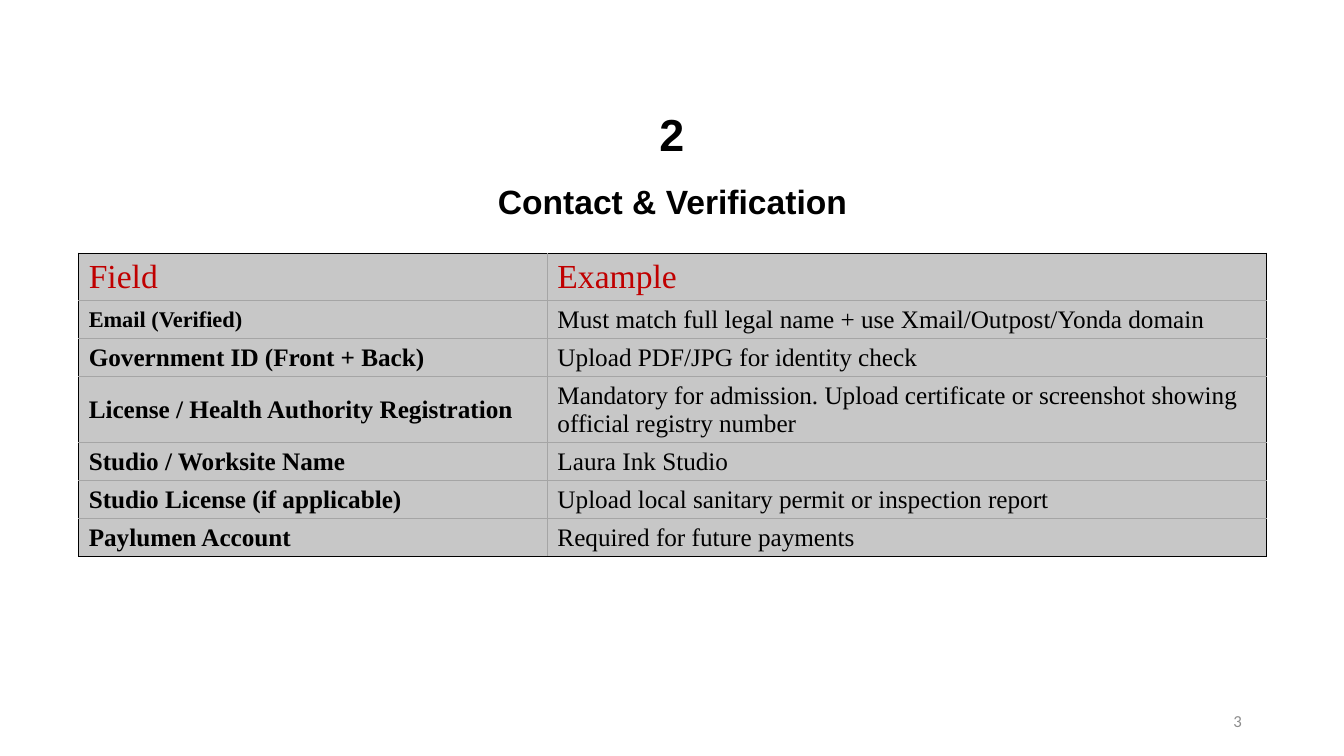
"""Build the contact and verification slide with its table of required fields."""
import dataclasses

import lxml.etree
import pptx
import pptx.dml.color
import pptx.enum.text
import pptx.oxml.ns
import pptx.util

COLORS = {"text": "000000", "header": "C00000", "cell": "C7C7C7",
          "outline": "000000", "grid": "A5A5A5", "number": "8C8C8C"}
SERIF = "Times New Roman"
ALIGN = pptx.enum.text.PP_ALIGN
MIDDLE = pptx.enum.text.MSO_ANCHOR.MIDDLE
COLUMN_WIDTHS = (334.8, 513.4)


@dataclasses.dataclass
class FieldRow:
    """One row of the table, with its height and text format."""
    field: str
    example: str
    height: float = 27.1
    field_size: float = 18
    example_size: float = 18
    color: str = "text"
    bold_field: bool = True


@dataclasses.dataclass
class Label:
    """A text box with its place and text format."""
    text: str
    left: float
    top: float
    width: float
    height: float
    size: float
    font: str
    color: str
    align: ALIGN
    bold: bool = False
    wrap: bool = True
    anchor: pptx.enum.text.MSO_ANCHOR = MIDDLE


ROWS = [
    FieldRow("Field", "Example", 33.8, 24, 24, "header", False),
    FieldRow("Email (Verified)",
             "Must match full legal name + use Xmail/Outpost/Yonda domain", field_size=16),
    FieldRow("Government ID (Front + Back)", "Upload PDF/JPG for identity check"),
    FieldRow("License / Health Authority Registration",
             "Mandatory for admission. Upload certificate or screenshot showing "
             "official registry number", 47.1),
    FieldRow("Studio / Worksite Name", "Laura Ink Studio"),
    FieldRow("Studio License (if applicable)",
             "Upload local sanitary permit or inspection report"),
    FieldRow("Paylumen Account", "Required for future payments"),
]
LABELS = [
    Label("2", 463.7, 72.7, 32.4, 46.1, 32, "Arial", "text", ALIGN.CENTER, True, False,
          pptx.enum.text.MSO_ANCHOR.TOP),
    Label("3", 678.2, 500.4, 216, 28.8, 12, "Calibri", "number", ALIGN.RIGHT),
]


def write_text(text_frame, text: str, *, size: float, font: str, color: str,
               bold: bool = False, align: ALIGN = ALIGN.LEFT) -> None:
    """Put one formatted paragraph in a text frame."""
    paragraph = text_frame.paragraphs[0]
    paragraph.alignment = align
    run = paragraph.add_run()
    run.text = text
    run.font.size = pptx.util.Pt(size)
    run.font.name = font
    run.font.bold = bold
    run.font.color.rgb = pptx.dml.color.RGBColor.from_string(COLORS[color])


def set_border(cell, side: str, outer: bool) -> None:
    """Draw one side of a cell as table outline or inner grid line."""
    qualify = pptx.oxml.ns.qn
    properties = cell._tc.get_or_add_tcPr()
    width = pptx.util.Pt(0.96 if outer else 0.5)
    line = lxml.etree.SubElement(properties, qualify(f"a:ln{side}"), w=str(int(width)))
    fill = lxml.etree.SubElement(line, qualify("a:solidFill"))
    lxml.etree.SubElement(fill, qualify("a:srgbClr"),
                          val=COLORS["outline" if outer else "grid"])


def add_field_table(slide, rows: list[FieldRow]) -> None:
    """Add the table of fields and examples."""
    table = slide.shapes.add_table(
        len(rows), len(COLUMN_WIDTHS), pptx.util.Pt(56.2), pptx.util.Pt(180.9),
        pptx.util.Pt(sum(COLUMN_WIDTHS)),
        pptx.util.Pt(sum(row.height for row in rows))).table
    table.first_row = table.horz_banding = False
    for column, width in zip(table.columns, COLUMN_WIDTHS):
        column.width = pptx.util.Pt(width)
    for index, row in enumerate(rows):
        table.rows[index].height = pptx.util.Pt(row.height)
        contents = ((row.field, row.field_size, row.bold_field),
                    (row.example, row.example_size, False))
        for position, (text, size, bold) in enumerate(contents):
            cell = table.cell(index, position)
            cell.vertical_anchor = MIDDLE
            set_border(cell, "L", position == 0)
            set_border(cell, "R", position == len(contents) - 1)
            set_border(cell, "T", index == 0)
            set_border(cell, "B", index == len(rows) - 1)
            cell.fill.solid()
            cell.fill.fore_color.rgb = pptx.dml.color.RGBColor.from_string(COLORS["cell"])
            write_text(cell.text_frame, text, size=size, font=SERIF,
                       color=row.color, bold=bold)


def add_title(slide, text: str) -> None:
    """Place and format the slide title."""
    title = slide.shapes.title
    title.left, title.top = pptx.util.Pt(56.2), pptx.util.Pt(125.3)
    title.width, title.height = pptx.util.Pt(sum(COLUMN_WIDTHS)), pptx.util.Pt(36)
    title.text_frame.auto_size = pptx.enum.text.MSO_AUTO_SIZE.NONE
    title.text_frame.vertical_anchor = MIDDLE
    write_text(title.text_frame, text, size=24, font="Arial", color="text",
               bold=True, align=ALIGN.CENTER)


def add_label(slide, label: Label) -> None:
    """Add a text box for a label."""
    shape = slide.shapes.add_textbox(*map(
        pptx.util.Pt, (label.left, label.top, label.width, label.height)))
    shape.text_frame.word_wrap = label.wrap
    shape.text_frame.vertical_anchor = label.anchor
    write_text(shape.text_frame, label.text, size=label.size, font=label.font,
               color=label.color, bold=label.bold, align=label.align)


def main() -> None:
    """Build and save the presentation."""
    presentation = pptx.Presentation()
    presentation.slide_width = pptx.util.Pt(960)
    presentation.slide_height = pptx.util.Pt(540)
    slide = presentation.slides.add_slide(presentation.slide_layouts[5])
    add_title(slide, "Contact & Verification")
    add_field_table(slide, ROWS)
    for label in LABELS:
        add_label(slide, label)
    presentation.save("out.pptx")


if __name__ == "__main__":
    main()
